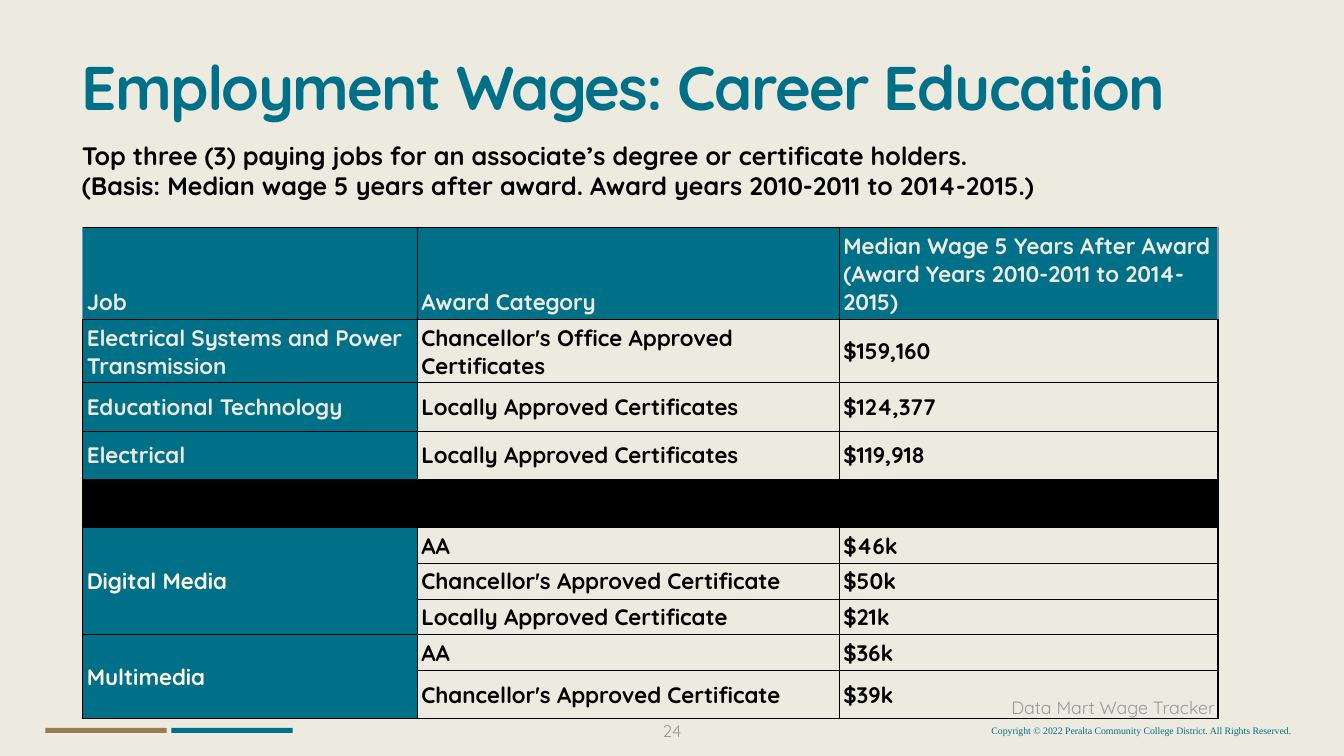
from pptx import Presentation
from pptx.dml.color import RGBColor
from pptx.enum.shapes import MSO_SHAPE
from pptx.enum.text import MSO_ANCHOR, PP_ALIGN
from pptx.oxml import parse_xml
from pptx.oxml.ns import nsdecls
from pptx.util import Pt

COLORS = {
    "paper": "EDEAE0",
    "teal": "007088",
    "gold": "947D4E",
    "black": "000000",
    "gray": "999999",
    "cream": "FCF8E7",
    "edge": "7695B6",
}
FONT = "Quicksand"
COLUMN_WIDTHS = [239, 301.5, 270.5]
ROW_HEIGHTS = [66, 45, 34.5, 34.5, 34.5, 25.5, 25.5, 25.5, 25.5, 34.5]
SEPARATOR_ROW = 4
ROWS = [
    ("Job", "Award Category",
     "Median Wage 5 Years After Award (Award Years 2010-2011 to 2014-2015)"),
    ("Electrical Systems and Power Transmission",
     "Chancellor's Office Approved Certificates", "$159,160"),
    ("Educational Technology", "Locally Approved Certificates", "$124,377"),
    ("Electrical", "Locally Approved Certificates", "$119,918"),
    ("", "", ""),
    ("Digital Media", "AA", "$46k"),
    ("", "Chancellor's Approved Certificate", "$50k"),
    ("", "Locally Approved Certificate", "$21k"),
    ("Multimedia", "AA", "$36k"),
    ("", "Chancellor's Approved Certificate", "$39k"),
]
JOB_SPANS = [(5, 7), (8, 9)]


def rgb(name):
    return RGBColor.from_string(COLORS[name])


def write_text(tf, text, size=16, color="black", bold=False, font=FONT,
               align=PP_ALIGN.LEFT, line_spacing=None, tracking=None):
    for i, line in enumerate(text.split("\n")):
        p = tf.add_paragraph() if i else tf.paragraphs[0]
        p.alignment = align
        if line_spacing:
            p.line_spacing = line_spacing
        r = p.add_run()
        r.text = line
        r.font.name = font
        r.font.size = Pt(size)
        r.font.bold = bold
        r.font.color.rgb = rgb(color)
        if tracking:
            r.font._element.set("spc", str(round(tracking * 100)))


def set_margins(target, margin):
    target.margin_left = target.margin_right = Pt(margin)
    target.margin_top = target.margin_bottom = Pt(margin)


def add_text(s, box, text, anchor=MSO_ANCHOR.TOP, wrap=True, margin=None, **fmt):
    tf = s.shapes.add_textbox(*map(Pt, box)).text_frame
    tf.word_wrap = wrap
    tf.vertical_anchor = anchor
    if margin is not None:
        set_margins(tf, margin)
    write_text(tf, text, **fmt)


def add_bar(s, left, color):
    sp = s.shapes.add_shape(MSO_SHAPE.RECTANGLE, Pt(left), Pt(520), Pt(86.5), Pt(3.5))
    sp.shadow.inherit = False
    sp.fill.solid()
    sp.fill.fore_color.rgb = rgb(color)
    sp.line.fill.background()


def set_borders(cell, edges):
    tcPr = cell._tc.get_or_add_tcPr()
    for i, side in enumerate("LRTB"):
        color = COLORS["edge" if side in edges else "black"]
        tcPr.insert(i, parse_xml(
            f'<a:ln{side} {nsdecls("a")} w="{Pt(1)}"><a:solidFill>'
            f'<a:srgbClr val="{color}"/></a:solidFill></a:ln{side}>'))


def cell_fill(row, col):
    if row == SEPARATOR_ROW:
        return "black"
    return "teal" if row == 0 or col == 0 else None


def cell_edges(row, col):
    if row == 0:
        return {0: "L", 2: "R"}.get(col, "")
    return "B" if col == 0 and row == len(ROWS) - 1 else ""


def format_cell(cell, row, col, text):
    fill = cell_fill(row, col)
    if fill:
        cell.fill.solid()
        cell.fill.fore_color.rgb = rgb(fill)
    else:
        cell.fill.background()
    set_borders(cell, cell_edges(row, col))
    set_margins(cell, 3)
    cell.vertical_anchor = MSO_ANCHOR.MIDDLE if row else MSO_ANCHOR.BOTTOM
    if text:
        color = "black"
        if fill:
            color = "cream" if row > SEPARATOR_ROW else "paper"
        write_text(cell.text_frame, text, color=color, bold=True)


def add_wage_table(s):
    table = s.shapes.add_table(
        len(ROWS), len(COLUMN_WIDTHS), Pt(59), Pt(162.5),
        Pt(sum(COLUMN_WIDTHS)), Pt(sum(ROW_HEIGHTS))).table
    table.first_row = table.horz_banding = False
    for column, width in zip(table.columns, COLUMN_WIDTHS):
        column.width = Pt(width)
    for row, height in zip(table.rows, ROW_HEIGHTS):
        row.height = Pt(height)
    for i, texts in enumerate(ROWS):
        for j, text in enumerate(texts):
            format_cell(table.cell(i, j), i, j, text)
    for first, last in JOB_SPANS:
        table.cell(first, 0).merge(table.cell(last, 0))


def main():
    prs = Presentation()
    prs.slide_width, prs.slide_height = Pt(960), Pt(540)
    s = prs.slides.add_slide(prs.slide_layouts[6])
    s.background.fill.solid()
    s.background.fill.fore_color.rgb = rgb("paper")

    add_text(s, (701, 514, 228.5, 15),
             "Copyright © 2022 Peralta Community College District. All Rights Reserved.",
             size=7, color="teal", font="Times New Roman", align=PP_ALIGN.RIGHT)
    add_bar(s, 122.5, "teal")
    add_bar(s, 32.5, "gold")
    add_text(s, (372, 511, 216, 19.5), "24", size=12, color="gray",
             align=PP_ALIGN.CENTER)
    add_text(s, (51.5, 12.5, 875, 104.5), "Employment Wages: Career Education",
             anchor=MSO_ANCHOR.MIDDLE, size=44, color="teal", bold=True,
             line_spacing=0.9, tracking=-1.2)
    add_wage_table(s)
    add_text(s, (719.5, 494.5, 158.5, 21), "Data Mart Wage Tracker",
             anchor=MSO_ANCHOR.MIDDLE, wrap=False, margin=3, size=12.7, color="gray")
    add_text(s, (51.5, 96.5, 811.5, 51),
             "Top three (3) paying jobs for an associate’s degree or certificate holders.\n"
             "(Basis: Median wage 5 years after award. Award years 2010-2011 to 2014-2015.)",
             size=18, bold=True)
    prs.save("out.pptx")


if __name__ == "__main__":
    main()
